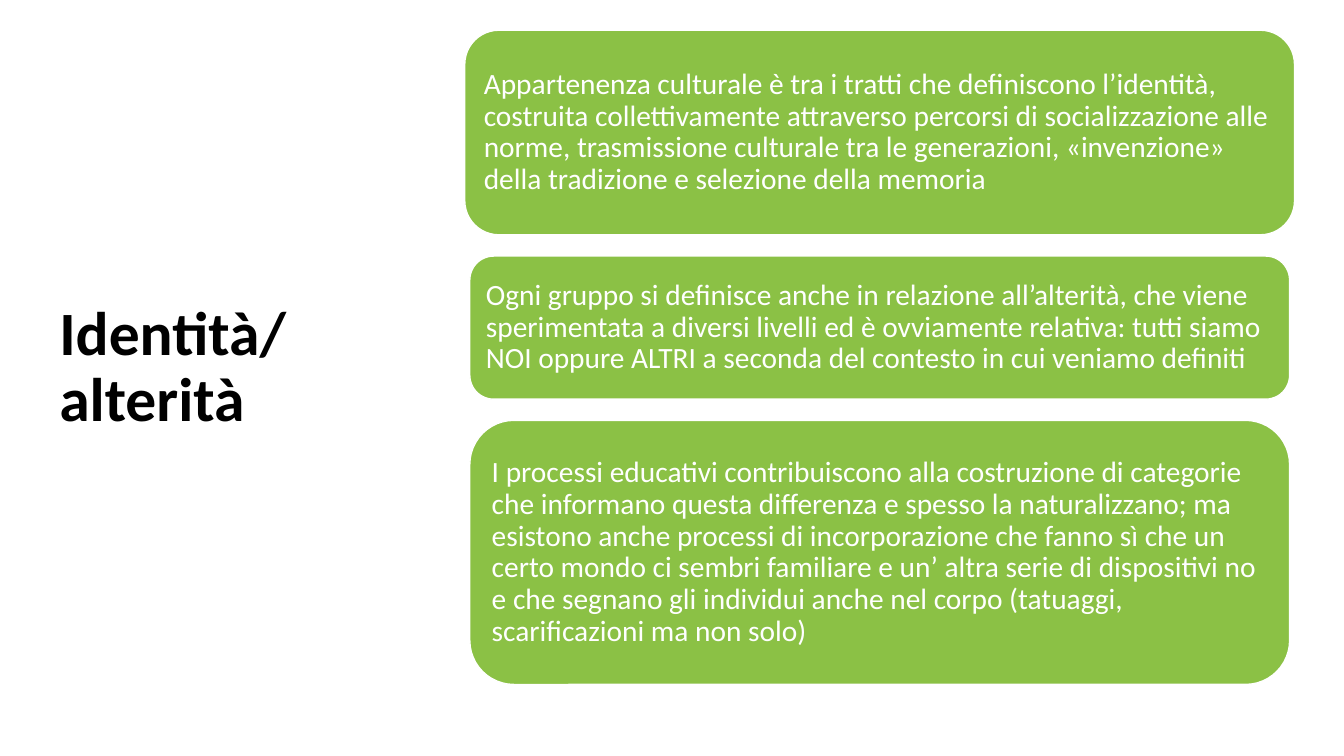
from collections import namedtuple
from dataclasses import dataclass

from pptx import Presentation, util as u
from pptx.dml.color import RGBColor
from pptx.enum import shapes, text

Box = namedtuple("Box", "left top width height")


@dataclass(frozen=True)
class Theme:
    font: str = "Calibri"
    ink: str = "000000"
    panel: str = "8BC145"
    paper: str = "FFFFFF"
    title_size: int = 44
    body_size: int = 21


THEME = Theme()
SLIDE_WIDTH, SLIDE_HEIGHT = 13.33, 7.5
TITLE_BOX = Box(0.49, 0.61, 4.11, 6.09)
PANELS_BOX = Box(4.61, 0.3, 8.23, 6.49)
PANEL_GAP = 0.21

TITLE = "Identità/alterità"
# Each panel: share of the column width, weight in its height, wording
PANELS = [
    (1, 2.03, "Appartenenza culturale è tra i tratti che definiscono l’identità, "
     "costruita collettivamente attraverso percorsi di socializzazione alle norme, "
     "trasmissione culturale tra le generazioni, «invenzione» della tradizione "
     "e selezione della memoria"),
    (0.988, 1.42, "Ogni gruppo si definisce anche in relazione all’alterità, che viene "
     "sperimentata a diversi livelli ed è ovviamente relativa: tutti siamo NOI "
     "oppure ALTRI a seconda del contesto in cui veniamo definiti"),
    (0.988, 2.62, "I processi educativi contribuiscono alla costruzione di categorie che "
     "informano questa differenza e spesso la naturalizzano; ma esistono anche "
     "processi di incorporazione che fanno sì che un certo mondo ci sembri familiare "
     "e un’ altra serie di dispositivi no e che segnano gli individui anche nel corpo "
     "(tatuaggi, scarificazioni ma non solo)"),
]


def inches(box):
    return [u.Inches(length) for length in box]


def write(shape, words, color, margins, **font):
    """Fill a shape with one left-aligned, vertically centred paragraph."""
    frame = shape.text_frame
    settings = {"word_wrap": True, "vertical_anchor": text.MSO_ANCHOR.MIDDLE, **margins}
    for name, value in settings.items():
        setattr(frame, name, value)
    para = frame.paragraphs[0]
    para.alignment = text.PP_ALIGN.LEFT
    para.line_spacing = 0.9
    span = para.add_run()
    span.text = words
    for name, value in {"name": THEME.font, **font}.items():
        setattr(span.font, name, value)
    span.font.color.rgb = RGBColor.from_string(color)


def add_title(page, box):
    title = page.shapes.add_textbox(*inches(box))
    write(title, TITLE, THEME.ink, {}, size=u.Pt(THEME.title_size), bold=True)


def add_panels(page, box):
    """Stack the panels down the box, centred, with equal gaps."""
    margins = {f"margin_{side}": u.Inches(0.09)
               for side in ("left", "top", "right", "bottom")}
    free_height = box.height - PANEL_GAP * (len(PANELS) - 1)
    total_weight = sum(weight for _, weight, _ in PANELS)
    top = box.top
    for share, weight, words in PANELS:
        width = box.width * share
        height = free_height * weight / total_weight
        left = box.left + (box.width - width) / 2
        panel = page.shapes.add_shape(shapes.MSO_SHAPE.ROUNDED_RECTANGLE,
                                      *inches(Box(left, top, width, height)))
        panel.shadow.inherit = False
        panel.fill.solid()
        panel.fill.fore_color.rgb = RGBColor.from_string(THEME.panel)
        panel.line.color.rgb = RGBColor.from_string(THEME.paper)
        panel.line.width = u.Pt(1)
        write(panel, words, THEME.paper, margins, size=u.Pt(THEME.body_size))
        top += height + PANEL_GAP


def main():
    deck = Presentation()
    deck.slide_width = u.Inches(SLIDE_WIDTH)
    deck.slide_height = u.Inches(SLIDE_HEIGHT)
    page = deck.slides.add_slide(deck.slide_layouts[6])
    add_title(page, TITLE_BOX)
    add_panels(page, PANELS_BOX)
    deck.save("out.pptx")


if __name__ == "__main__":
    main()
